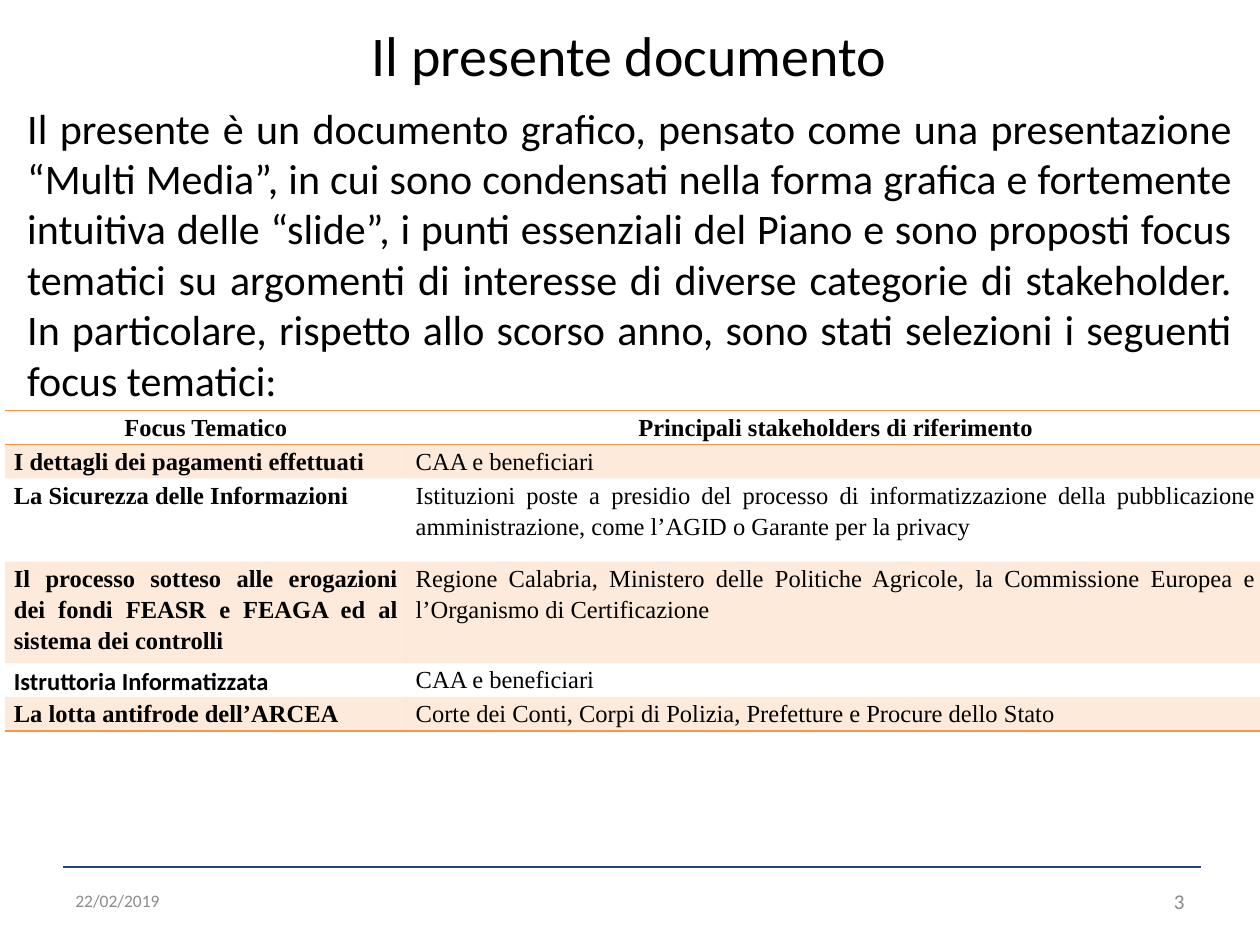
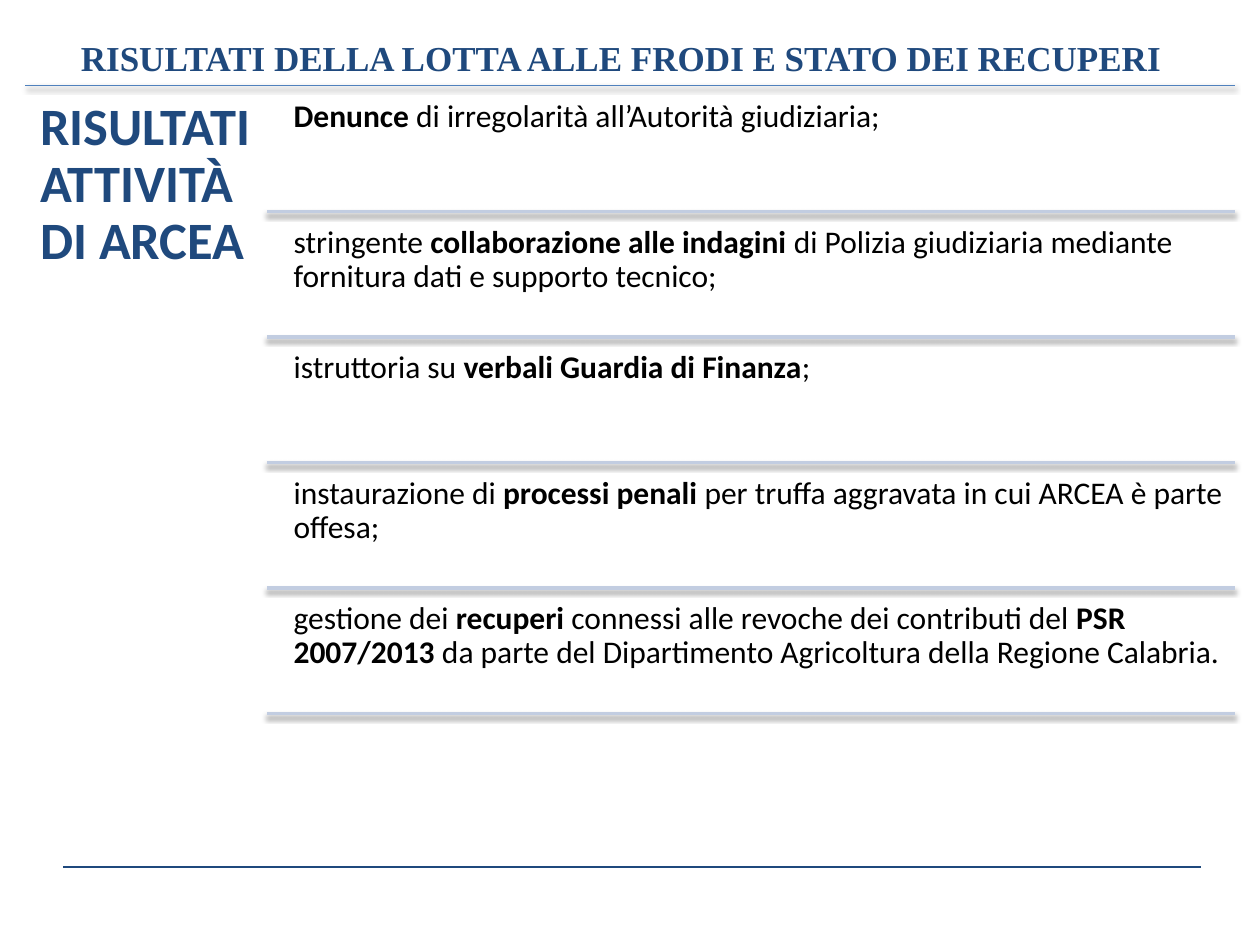
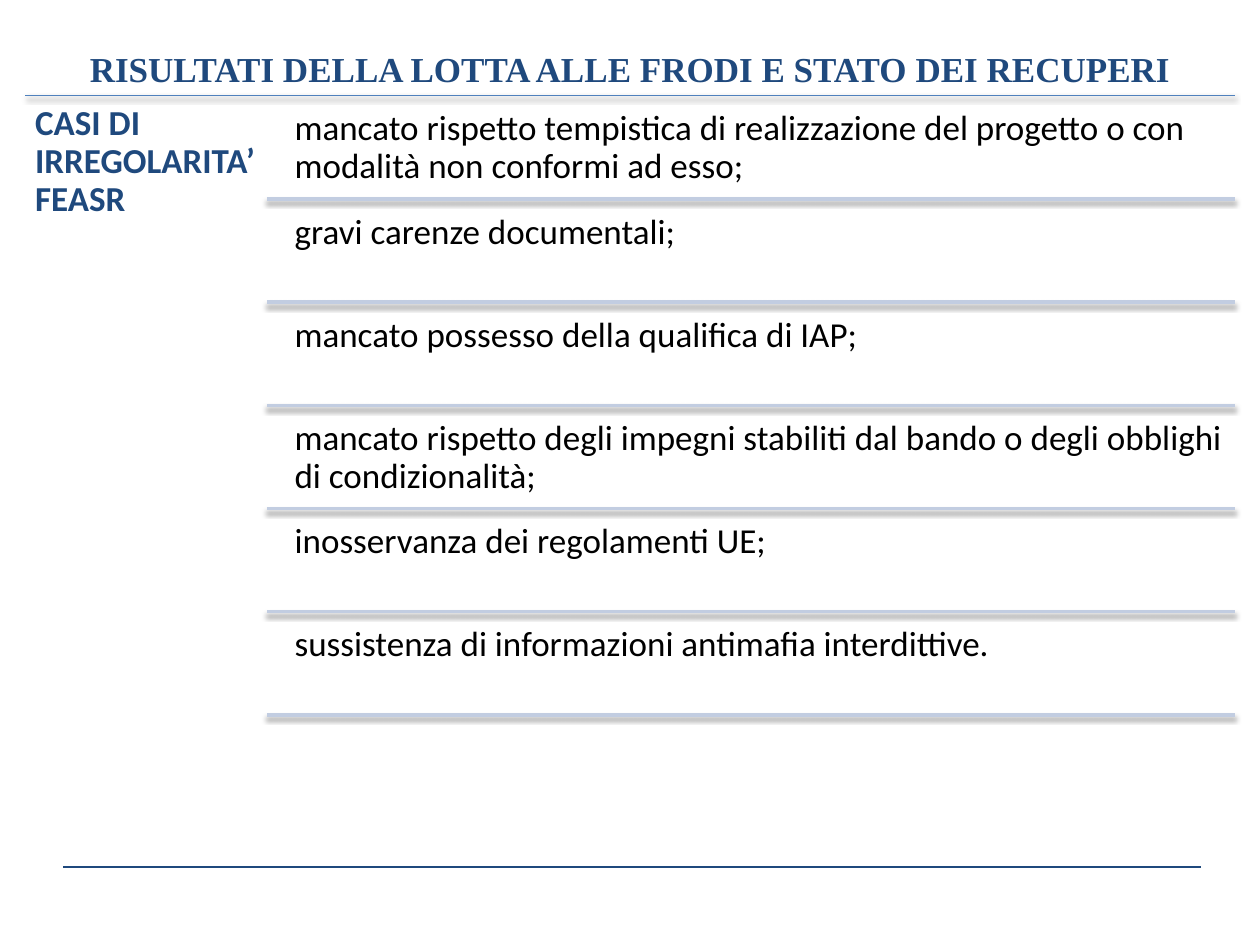
"""Build three slides on the plan's focus themes and the results of the fight against fraud."""

from dataclasses import dataclass

from lxml.etree import SubElement
from pptx import Presentation
from pptx.dml.color import RGBColor
from pptx.enum.shapes import MSO_CONNECTOR
from pptx.enum.text import MSO_ANCHOR as Anchor, PP_ALIGN as Align
from pptx.oxml.ns import qn
from pptx.slide import Slide
from pptx.table import _Cell as Cell
from pptx.util import Cm, Pt

BLACK = RGBColor(0x00, 0x00, 0x00)
NAVY = RGBColor(0x1F, 0x49, 0x7D)
BLUE = RGBColor(0x4F, 0x81, 0xBD)
PALE_BLUE = RGBColor(0xC2, 0xCD, 0xE1)
ORANGE = RGBColor(0xF7, 0x96, 0x46)
DATE_GRAY = RGBColor(0x8C, 0x8C, 0x8C)
NUMBER_GRAY = RGBColor(0x89, 0x89, 0x89)

SANS = "Calibri"
SERIF = "Times New Roman"
NO_STYLE_NO_GRID = "{2D5ABB26-0587-4C30-8999-92F81FD0307C}"

FOCUS_COLUMNS = (8.1, 17.3)
FOCUS_ROW_HEIGHTS = (0.61, 0.61, 1.68, 1.9, 0.61, 0.61)
FOCUS_ROWS = (
    ("Focus Tematico", "Principali stakeholders di riferimento"),
    ("I dettagli dei pagamenti effettuati", "CAA e beneficiari"),
    (
        "La Sicurezza delle Informazioni",
        "Istituzioni poste a presidio del processo di informatizzazione della pubblicazione "
        "amministrazione, come l’AGID o Garante per la privacy",
    ),
    (
        "Il processo sotteso alle erogazioni dei fondi FEASR e FEAGA ed al sistema dei controlli",
        "Regione Calabria, Ministero delle Politiche Agricole, la Commissione Europea e "
        "l’Organismo di Certificazione",
    ),
    ("Istruttoria Informatizzata", "CAA e beneficiari"),
    (
        "La lotta antifrode dell’ARCEA",
        "Corte dei Conti, Corpi di Polizia, Prefetture e Procure dello Stato",
    ),
)
SANS_FOCUS_ROW = 4


@dataclass(frozen=True)
class Box:
    """Place of a text box in centimetres."""

    left: float
    top: float
    width: float
    height: float


@dataclass(frozen=True)
class TextStyle:
    """Look of the text in a box, with insets in centimetres."""

    size: float
    color: RGBColor = BLACK
    font: str = SANS
    bold: bool = False
    align: Align = Align.LEFT
    anchor: Anchor = Anchor.TOP
    inset_x: float = 0.25
    inset_y: float = 0.13
    line_spacing: float = 1.0


@dataclass(frozen=True)
class Shadow:
    """Downward black shadow, in points and percent."""

    distance: float
    opacity: int
    blur: float = 3.1


@dataclass(frozen=True)
class Rule:
    """Horizontal line, in centimetres and points."""

    left: float
    right: float
    color: RGBColor
    weight: float
    shadow: Shadow | None = None


@dataclass(frozen=True)
class ResultList:
    """Heading beside ruled items; every second part of an item is bold."""

    title_box: Box
    top: float
    heading: str
    heading_size: float
    heading_inset: float
    item_size: float
    item_inset: float
    item_height: float
    gap: float
    items: tuple[tuple[str, ...], ...]


RESULT_TITLE = "RISULTATI DELLA LOTTA ALLE FRODI E STATO DEI RECUPERI"
RESULT_TITLE_STYLE = TextStyle(20, NAVY, SERIF, True, Align.CENTER, inset_y=0.2)

FOOTER_RULE = Rule(1.27, 24.21, NAVY, 1.5)
TOP_RULE = Rule(0.51, 24.89, BLUE, 0.75, Shadow(1.8, 35))
ITEM_RULE = Rule(5.38, 24.89, PALE_BLUE, 2, Shadow(1.6, 38))

ACTIVITY_RESULTS = ResultList(
    title_box=Box(1.09, 0.53, 22.86, 0.99),
    top=1.73,
    heading="RISULTATI ATTIVITÀ DI ARCEA",
    heading_size=30,
    heading_inset=0.3,
    item_size=18,
    item_inset=0.18,
    item_height=2.41,
    gap=0.12,
    items=(
        ("", "Denunce", " di irregolarità all’Autorità giudiziaria;"),
        (
            "stringente ",
            "collaborazione alle indagini",
            " di Polizia giudiziaria mediante fornitura dati e supporto tecnico;",
        ),
        ("istruttoria su ", "verbali Guardia di Finanza", ";"),
        (
            "instaurazione di ",
            "processi penali",
            " per truffa aggravata in cui ARCEA è parte offesa;",
        ),
        (
            "gestione dei ",
            "recuperi",
            " connessi alle revoche dei contributi del ",
            "PSR 2007/2013",
            " da parte del Dipartimento Agricoltura della Regione Calabria.",
        ),
    ),
)
IRREGULARITIES = ResultList(
    title_box=Box(1.27, 0.76, 22.86, 1.37),
    top=1.93,
    heading="CASI DI IRREGOLARITA’ FEASR",
    heading_size=20,
    heading_inset=0.2,
    item_size=20,
    item_inset=0.2,
    item_height=1.98,
    gap=0.1,
    items=(
        (
            "mancato rispetto tempistica di realizzazione del progetto o con modalità "
            "non conformi ad esso;",
        ),
        ("gravi carenze documentali;",),
        ("mancato possesso della qualifica di IAP;",),
        (
            "mancato rispetto degli impegni stabiliti dal bando o degli obblighi "
            "di condizionalità;",
        ),
        ("inosservanza dei regolamenti UE;",),
        ("sussistenza di informazioni antimafia interdittive.",),
    ),
)


def add_text(slide: Slide, box: Box, style: TextStyle, *parts: str) -> None:
    """Add a text box of one paragraph in which every second part is bold."""
    shape = slide.shapes.add_textbox(Cm(box.left), Cm(box.top), Cm(box.width), Cm(box.height))
    text_frame = shape.text_frame
    text_frame.word_wrap = True
    text_frame.vertical_anchor = style.anchor
    text_frame.margin_left = text_frame.margin_right = Cm(style.inset_x)
    text_frame.margin_top = text_frame.margin_bottom = Cm(style.inset_y)
    paragraph = text_frame.paragraphs[0]
    paragraph.alignment = style.align
    paragraph.line_spacing = style.line_spacing
    for index, part in enumerate(parts):
        if part:
            run = paragraph.add_run()
            run.text = part
            run.font.name = style.font
            run.font.size = Pt(style.size)
            run.font.color.rgb = style.color
            run.font.bold = style.bold or index % 2 == 1


def add_rule(slide: Slide, rule: Rule, top: float) -> None:
    """Draw a horizontal rule with its shadow, if it has one."""
    connector = slide.shapes.add_connector(
        MSO_CONNECTOR.STRAIGHT, Cm(rule.left), Cm(top), Cm(rule.right), Cm(top)
    )
    connector.line.color.rgb = rule.color
    connector.line.width = Pt(rule.weight)
    effects = SubElement(connector.element.spPr, qn("a:effectLst"))
    if rule.shadow:
        outer = SubElement(
            effects,
            qn("a:outerShdw"),
            blurRad=str(Pt(rule.shadow.blur)),
            dist=str(Pt(rule.shadow.distance)),
            dir="5400000",
            rotWithShape="0",
        )
        color = SubElement(outer, qn("a:srgbClr"), val=str(BLACK))
        SubElement(color, qn("a:alpha"), val=str(rule.shadow.opacity * 1000))


def add_slide(presentation: Presentation) -> Slide:
    """Add a blank slide with the footer rule."""
    slide = presentation.slides.add_slide(presentation.slide_layouts[6])
    add_rule(slide, FOOTER_RULE, 17.48)
    return slide


def set_borders(cell: Cell, edges: tuple[str, ...]) -> None:
    """Draw orange borders on the given edges of a cell, before any fill."""
    properties = cell._tc.get_or_add_tcPr()
    for position, edge in enumerate(edges):
        border = properties.makeelement(qn(f"a:{edge}"), {"w": str(Pt(1))})
        fill = SubElement(border, qn("a:solidFill"))
        SubElement(fill, qn("a:srgbClr"), val=str(ORANGE))
        properties.insert(position, border)


def shade(cell: Cell) -> None:
    """Fill a cell with transparent orange."""
    cell.fill.solid()
    cell.fill.fore_color.rgb = ORANGE
    for color in cell._tc.tcPr.findall(f"{qn('a:solidFill')}/{qn('a:srgbClr')}"):
        SubElement(color, qn("a:alpha"), val="20000")


def format_cell(cell: Cell, row: int, column: int) -> None:
    """Give a focus table cell its text style, fill and borders."""
    cell.margin_left = cell.margin_right = Cm(0.18)
    cell.margin_top = cell.margin_bottom = 0
    paragraph = cell.text_frame.paragraphs[0]
    paragraph.alignment = Align.CENTER if row == 0 else Align.JUSTIFY
    paragraph.line_spacing = 1.15
    font = paragraph.runs[0].font
    font.name = SANS if (row, column) == (SANS_FOCUS_ROW, 0) else SERIF
    font.size = Pt(14)
    font.bold = row == 0 or column == 0
    font.color.rgb = BLACK
    if row % 2:
        shade(cell)
    else:
        cell.fill.background()
    if row == 0:
        set_borders(cell, ("lnT", "lnB"))
    elif row == len(FOCUS_ROWS) - 1:
        set_borders(cell, ("lnB",))


def add_focus_table(slide: Slide) -> None:
    """Add the table of focus themes and stakeholders."""
    frame = slide.shapes.add_table(
        len(FOCUS_ROWS),
        len(FOCUS_COLUMNS),
        Cm(0.1),
        Cm(8.28),
        Cm(sum(FOCUS_COLUMNS)),
        Cm(sum(FOCUS_ROW_HEIGHTS)),
    )
    for style_id in frame.element.iter(qn("a:tableStyleId")):
        style_id.text = NO_STYLE_NO_GRID
    table = frame.table
    table.first_row = table.horz_banding = False
    for column, width in zip(table.columns, FOCUS_COLUMNS):
        column.width = Cm(width)
    for row, height in zip(table.rows, FOCUS_ROW_HEIGHTS):
        row.height = Cm(height)
    for row_index, texts in enumerate(FOCUS_ROWS):
        for column_index, text in enumerate(texts):
            cell = table.cell(row_index, column_index)
            cell.text_frame.text = text
            format_cell(cell, row_index, column_index)


def build_document_slide(presentation: Presentation) -> None:
    """Build the slide that introduces the document."""
    slide = add_slide(presentation)
    add_text(
        slide,
        Box(0.3, 1.93, 24.79, 5.99),
        TextStyle(24, align=Align.JUSTIFY),
        "Il presente è un documento grafico, pensato come una presentazione “Multi Media”, in cui "
        "sono condensati nella forma grafica e fortemente intuitiva delle “slide”, i punti "
        "essenziali del Piano e sono proposti focus tematici su argomenti di interesse di diverse "
        "categorie di stakeholder. In particolare, rispetto allo scorso anno, sono stati selezioni "
        "i seguenti focus tematici:",
    )
    add_text(
        slide,
        Box(0.25, 0.28, 24.87, 2.06),
        TextStyle(32, align=Align.CENTER),
        "Il presente documento",
    )
    add_text(
        slide,
        Box(1.27, 17.65, 5.92, 1.02),
        TextStyle(10, DATE_GRAY, anchor=Anchor.MIDDLE),
        "22/02/2019",
    )
    add_text(
        slide,
        Box(18.21, 17.65, 5.92, 1.02),
        TextStyle(12, NUMBER_GRAY, align=Align.RIGHT, anchor=Anchor.MIDDLE),
        "3",
    )
    add_focus_table(slide)


def build_result_slide(presentation: Presentation, results: ResultList) -> None:
    """Build a slide with a heading and evenly spaced ruled items."""
    slide = add_slide(presentation)
    add_text(slide, results.title_box, RESULT_TITLE_STYLE, RESULT_TITLE)
    add_rule(slide, TOP_RULE, results.top)
    inset = results.heading_inset
    heading_style = TextStyle(
        results.heading_size, NAVY, bold=True, inset_x=inset, inset_y=inset, line_spacing=0.9
    )
    add_text(slide, Box(0.51, results.top, 4.88, 12.7), heading_style, results.heading)
    inset = results.item_inset
    item_style = TextStyle(results.item_size, inset_x=inset, inset_y=inset, line_spacing=0.9)
    for index, parts in enumerate(results.items):
        top = results.top + results.gap + index * (results.item_height + results.gap)
        add_text(slide, Box(5.74, top, 19.15, results.item_height), item_style, *parts)
        add_rule(slide, ITEM_RULE, top + results.item_height)


def main() -> None:
    """Build and save the presentation."""
    presentation = Presentation()
    presentation.slide_width = Cm(25.4)
    presentation.slide_height = Cm(19.05)
    build_document_slide(presentation)
    for results in (ACTIVITY_RESULTS, IRREGULARITIES):
        build_result_slide(presentation, results)
    presentation.save("out.pptx")


if __name__ == "__main__":
    main()
